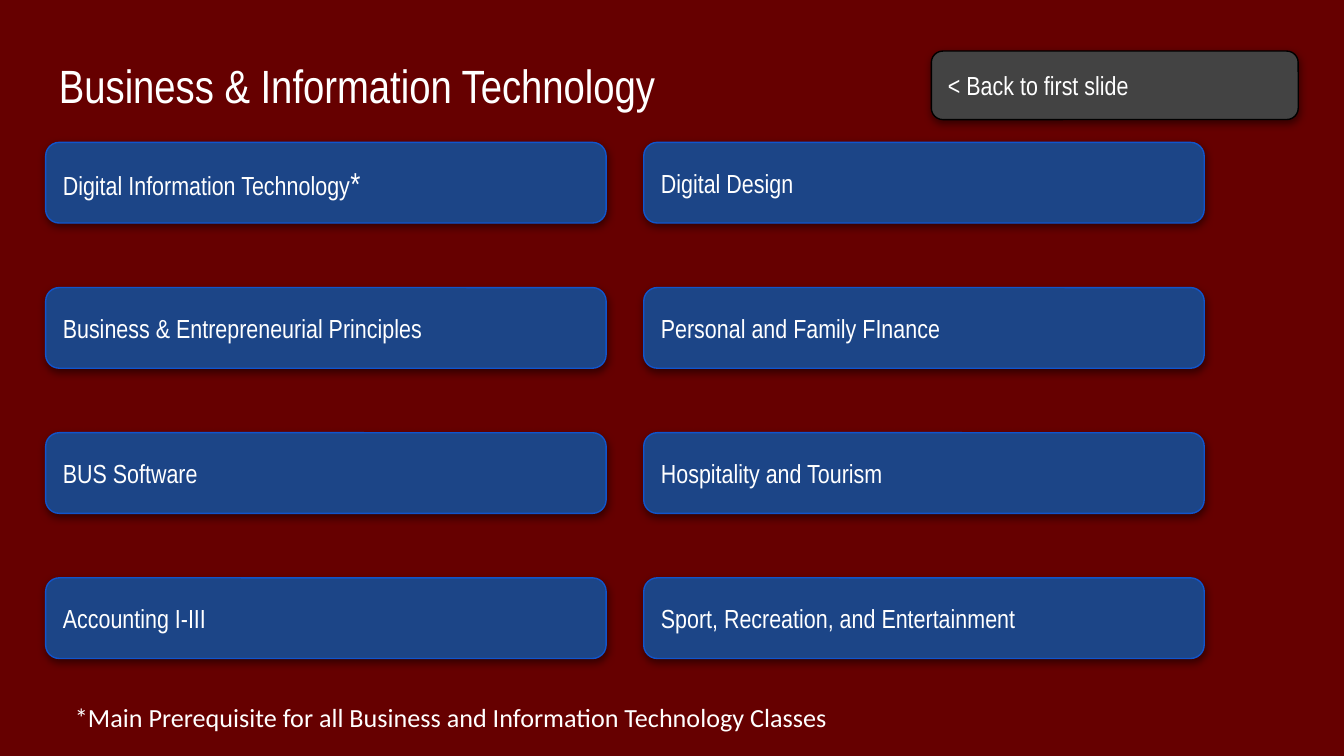
from pptx import Presentation
from pptx.dml.color import RGBColor
from pptx.enum.shapes import MSO_SHAPE
from pptx.enum.text import MSO_ANCHOR, PP_ALIGN
from pptx.oxml import parse_xml
from pptx.util import Inches, Pt

ROUND_RECT = MSO_SHAPE.ROUNDED_RECTANGLE
TOP, MIDDLE = MSO_ANCHOR.TOP, MSO_ANCHOR.MIDDLE
LEFT = PP_ALIGN.LEFT

TITLE = "Business & Information Technology"
BACK = "< Back to first slide"
FOOTNOTE = "*Main Prerequisite for all Business and Information Technology Classes"
COURSES = [
    [
        [("Digital Information Technology", 14), ("*", 17)],
        [("Business & Entrepreneurial Principles", 14)],
        [("BUS Software", 14)],
        [("Accounting I-III", 14)],
    ],
    [
        [("Digital Design", 14)],
        [("Personal and Family FInance", 14)],
        [("Hospitality and Tourism", 14)],
        [("Sport, Recreation, and Entertainment", 14)],
    ],
]

SLIDE_W = 10
SLIDE_H = SLIDE_W * 9 / 16
GRID_LEFT, GRID_TOP = 0.34, 1.06
COL_STEP, ROW_STEP = 4.45, 1.08
CARD_W, CARD_H = 4.17, 0.6

SHADOW = (
    '<a:outerShdw xmlns:a="http://schemas.openxmlformats.org/drawingml/2006/main"'
    ' blurRad="57150" dist="19050" dir="5400000" algn="bl" rotWithShape="0">'
    '<a:srgbClr val="000000"><a:alpha val="50000"/></a:srgbClr></a:outerShdw>'
)


def color(value):
    return RGBColor.from_string(value)


def add_text(sp, runs, font="Arial Narrow", anchor=TOP, fill="FFFFFF"):
    tf = sp.text_frame
    tf.word_wrap = True
    tf.vertical_anchor = anchor
    tf.margin_left = tf.margin_right = Inches(0.1)
    tf.margin_top = tf.margin_bottom = Inches(0.1)
    p = tf.paragraphs[0]
    p.alignment = LEFT
    for text, size in runs:
        r = p.add_run()
        r.text = text
        r.font.name = font
        r.font.size = Pt(size)
        r.font.color.rgb = color(fill)


def add_label(s, box, runs, **fmt):
    sp = s.shapes.add_textbox(*map(Inches, box))
    add_text(sp, runs, **fmt)


def add_button(s, box, runs, fill, line):
    sp = s.shapes.add_shape(ROUND_RECT, *map(Inches, box))
    sp.adjustments[0] = 0.167
    sp.fill.solid()
    sp.fill.fore_color.rgb = color(fill)
    sp.line.color.rgb = color(line)
    sp.line.width = Pt(0.75)
    sp.shadow.inherit = False
    sp.element.spPr.find("{*}effectLst").append(parse_xml(SHADOW))
    add_text(sp, runs, anchor=MIDDLE)


prs = Presentation()
prs.slide_width, prs.slide_height = Inches(SLIDE_W), Inches(SLIDE_H)
s = prs.slides.add_slide(prs.slide_layouts[6])
s.background.fill.solid()
s.background.fill.fore_color.rgb = color("660000")

add_label(s, (0.34, 0.32, 9.32, 0.63), [(TITLE, 25)])
add_button(s, (6.93, 0.38, 2.73, 0.51), [(BACK, 14)], "434343", "000000")

for col, courses in enumerate(COURSES):
    for row, runs in enumerate(courses):
        x = GRID_LEFT + col * COL_STEP
        y = GRID_TOP + row * ROW_STEP
        add_button(s, (x, y, CARD_W, CARD_H), runs, "1C4587", "1155CC")

add_label(s, (0.46, 5.12, 8.14, 0.44), [(FOOTNOTE, 14)], font="Calibri")

prs.save("out.pptx")
